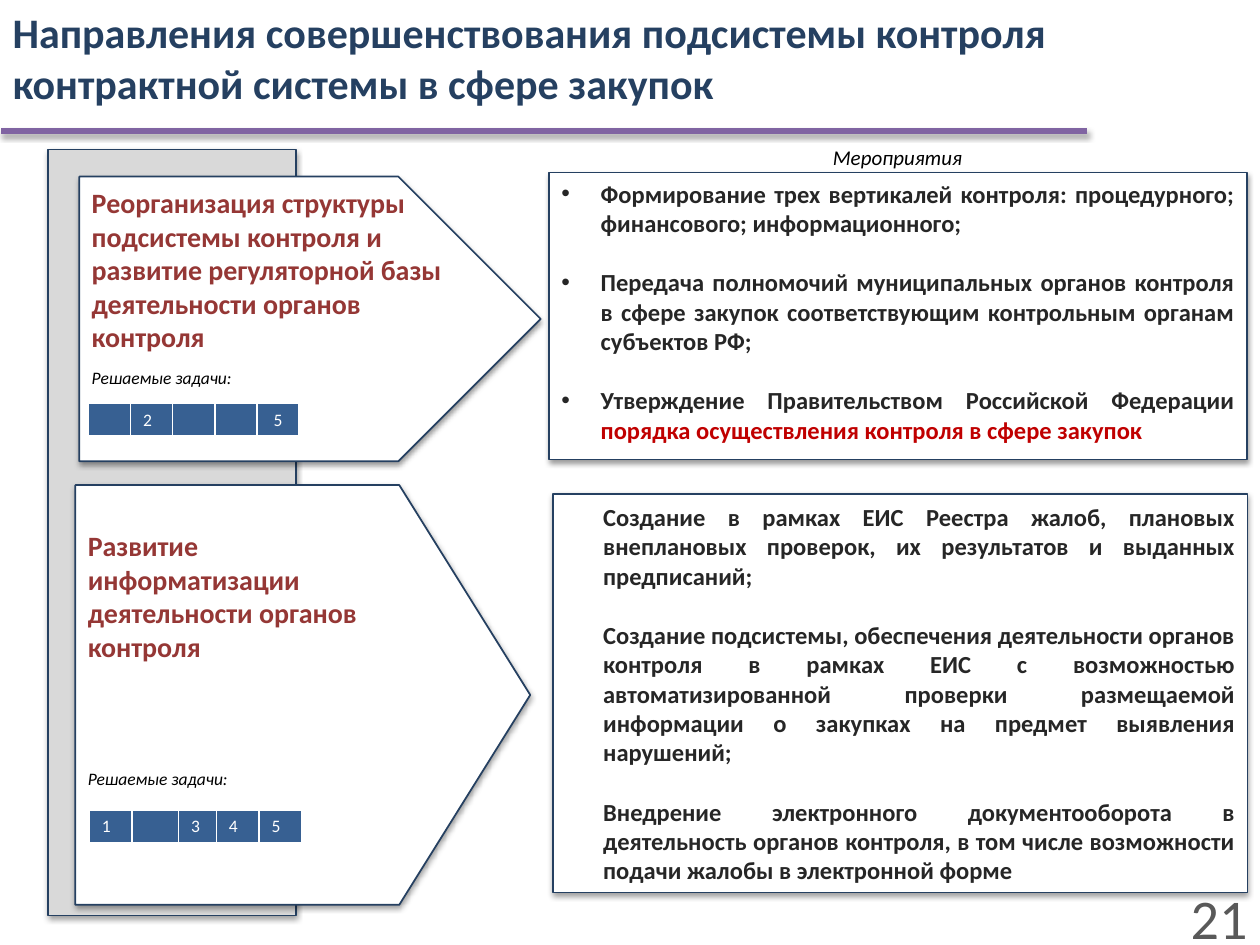
from dataclasses import dataclass

from lxml.etree import SubElement
from pptx import Presentation
from pptx.dml.color import RGBColor
from pptx.enum.shapes import MSO_CONNECTOR, MSO_SHAPE
from pptx.enum.text import MSO_ANCHOR, MSO_AUTO_SIZE, PP_ALIGN
from pptx.oxml.ns import qn
from pptx.util import Cm, Pt

FONT = "Calibri"
COLORS = {
    "navy": "254061", "blue": "376092", "purple": "8064A2", "maroon": "953735",
    "red": "C00000", "dark": "262626", "gray": "595959", "panel": "D9D9D9",
    "white": "FFFFFF", "black": "000000",
}


@dataclass
class Box:
    left: float
    top: float
    width: float
    height: float

    def emu(self) -> tuple:
        return Cm(self.left), Cm(self.top), Cm(self.width), Cm(self.height)


@dataclass
class Direction:
    box: Box
    point: float
    inset: float
    heading: list[str]
    gap: float
    table: Box
    columns: list[float]
    tasks: list[str]
    centered: str = ""


@dataclass
class Measures:
    box: Box
    anchor: MSO_ANCHOR
    indent: float
    bullet: str
    items: list[list[tuple[str, str]]]


DIRECTIONS = [
    Direction(Box(1.6, 3.56, 9.3, 5.74), 0.5, 0.18,
              ["Реорганизация структуры подсистемы контроля и развитие "
               "регуляторной базы деятельности органов контроля"],
              8, Box(1.78, 8.13, 4.25, 0.69), [0.85] * 5, ["", "2", "", "", "5"], "5"),
    Direction(Box(1.52, 9.78, 9.17, 8.46), 0.312, 0.88,
              ["Развитие", "информатизации деятельности органов контроля"],
              60, Box(1.8, 16.33, 4.28, 0.69), [0.86, 0.94, 0.76, 0.86, 0.86],
              ["1", "", "3", "4", "5"]),
]
MEASURES = [
    Measures(Box(11.07, 3.48, 14.07, 5.79), MSO_ANCHOR.TOP, 0.79, "•", [
        [("Формирование трех вертикалей контроля: процедурного; финансового; "
          "информационного;", "dark")],
        [("Передача полномочий муниципальных органов контроля в сфере закупок "
          "соответствующим контрольным органам субъектов РФ;", "dark")],
        [("Утверждение Правительством Российской Федерации ", "dark"),
         ("порядка осуществления контроля в сфере закупок", "red")],
    ]),
    Measures(Box(11.15, 9.96, 14, 8.03), MSO_ANCHOR.MIDDLE, 0.76, "", [
        [("Создание в рамках ЕИС Реестра жалоб, плановых внеплановых проверок, "
          "их результатов и выданных предписаний;", "dark")],
        [("Создание подсистемы, обеспечения деятельности органов контроля в рамках "
          "ЕИС с возможностью автоматизированной проверки размещаемой информации "
          "о закупках на предмет выявления нарушений;", "dark")],
        [("Внедрение электронного документооборота в деятельность органов контроля, "
          "в том числе возможности подачи жалобы в электронной форме", "dark")],
    ]),
]


def rgb(name: str) -> RGBColor:
    return RGBColor.from_string(COLORS[name])


def add_run(p, text: str, *, size: float, color: str, bold=False, italic=False):
    r = p.add_run()
    r.text = text
    r.font.name, r.font.size = FONT, Pt(size)
    r.font.bold, r.font.italic = bold, italic
    r.font.color.rgb = rgb(color)


def add_par(tf, text="", *, align=PP_ALIGN.LEFT, before=0, **font):
    p = tf.paragraphs[0] if not tf.paragraphs[0].runs else tf.add_paragraph()
    p.alignment, p.space_before = align, Pt(before)
    if text:
        add_run(p, text, **font)
    return p


def set_frame(tf, anchor):
    tf.word_wrap = True
    tf.auto_size = MSO_AUTO_SIZE.NONE
    tf.vertical_anchor = anchor


def add_shadow(sp, alpha: int, dist: float):
    effects = SubElement(sp._element.spPr, qn("a:effectLst"))
    shadow = SubElement(effects, qn("a:outerShdw"), blurRad=str(Pt(3.1)),
                        dist=str(Pt(dist)), dir="5400000", rotWithShape="0")
    color = SubElement(shadow, qn("a:srgbClr"), val=COLORS["black"])
    SubElement(color, qn("a:alpha"), val=str(alpha * 1000))


def add_panel(s, kind, box: Box, fill: str, width: float):
    sp = s.shapes.add_shape(kind, *box.emu())
    sp.fill.solid()
    sp.fill.fore_color.rgb = rgb(fill)
    sp.line.color.rgb = rgb("navy")
    sp.line.width = Pt(width)
    add_shadow(sp, 38, 1.6)
    return sp


def add_label(s, box: Box, text: str, anchor, **fmt):
    tf = s.shapes.add_textbox(*box.emu()).text_frame
    set_frame(tf, anchor)
    add_par(tf, text, **fmt)


def add_measures(s, m: Measures):
    tf = add_panel(s, MSO_SHAPE.RECTANGLE, m.box, "white", 0.75).text_frame
    set_frame(tf, m.anchor)
    for i, item in enumerate(m.items):
        p = add_par(tf, align=PP_ALIGN.JUSTIFY, before=17 if i else 0)
        for text, color in item:
            add_run(p, text, size=14, color=color, bold=True)
        pPr = p._p.get_or_add_pPr()
        pPr.set("marL", str(Cm(m.indent)))
        if m.bullet:
            pPr.set("indent", str(-Cm(m.indent)))
            SubElement(pPr, qn("a:buFont"), typeface="Arial")
            SubElement(pPr, qn("a:buChar"), char=m.bullet)


def add_borders(cell):
    tcPr = cell._tc.get_or_add_tcPr()
    for side, width in (("L", 1), ("R", 1), ("T", 1), ("B", 3)):
        ln = SubElement(tcPr, qn(f"a:ln{side}"), w=str(Pt(width)))
        fill = SubElement(ln, qn("a:solidFill"))
        SubElement(fill, qn("a:srgbClr"), val=COLORS["white"])


def add_tasks(s, d: Direction):
    table = s.shapes.add_table(1, len(d.tasks), *d.table.emu()).table
    table.first_row = table.horz_banding = False
    for i, (width, task) in enumerate(zip(d.columns, d.tasks)):
        table.columns[i].width = Cm(width)
        cell = table.cell(0, i)
        add_borders(cell)
        cell.fill.solid()
        cell.fill.fore_color.rgb = rgb("blue")
        align = PP_ALIGN.CENTER if task and task == d.centered else PP_ALIGN.LEFT
        p = add_par(cell.text_frame, task, align=align, size=10, color="white")
        SubElement(p._p, qn("a:endParaRPr"), sz="1000")


def add_direction(s, d: Direction):
    sp = add_panel(s, MSO_SHAPE.PENTAGON, d.box, "white", 1)
    sp.adjustments[0] = d.point
    tf = sp.text_frame
    set_frame(tf, MSO_ANCHOR.TOP)
    tf.margin_top = Cm(d.inset)
    for text in d.heading:
        add_par(tf, text, size=16, color="maroon", bold=True)
    add_par(tf, "Решаемые задачи:", before=d.gap, size=10, color="black", italic=True)
    add_tasks(s, d)


def main():
    prs = Presentation()
    prs.slide_width, prs.slide_height = Cm(25.4), Cm(19.05)
    s = prs.slides.add_slide(prs.slide_layouts[5])

    title = s.shapes.title
    title.left, title.top, title.width, title.height = Box(0, 0, 22, 2.31).emu()
    set_frame(title.text_frame, MSO_ANCHOR.MIDDLE)
    add_par(title.text_frame, "Направления совершенствования подсистемы контроля "
            "контрактной системы в сфере закупок", size=24, color="navy", bold=True)

    rule = s.shapes.add_connector(MSO_CONNECTOR.STRAIGHT, Cm(0.03), Cm(2.64), Cm(21.92), Cm(2.64))
    rule.line.color.rgb = rgb("purple")
    rule.line.width = Pt(3)
    add_shadow(rule, 35, 1.8)

    add_panel(s, MSO_SHAPE.RECTANGLE, Box(0.97, 3.02, 5, 15.44), "panel", 0.75)
    for d in DIRECTIONS:
        add_direction(s, d)
    for m in MEASURES:
        add_measures(s, m)
    add_label(s, Box(16.54, 2.79, 5.41, 0.76), "Мероприятия", MSO_ANCHOR.TOP,
              size=12, color="black", italic=True)
    add_label(s, Box(23.72, 17.91, 1.68, 1.14), "21", MSO_ANCHOR.MIDDLE,
              align=PP_ALIGN.RIGHT, size=32, color="gray")
    prs.save("out.pptx")


if __name__ == "__main__":
    main()
